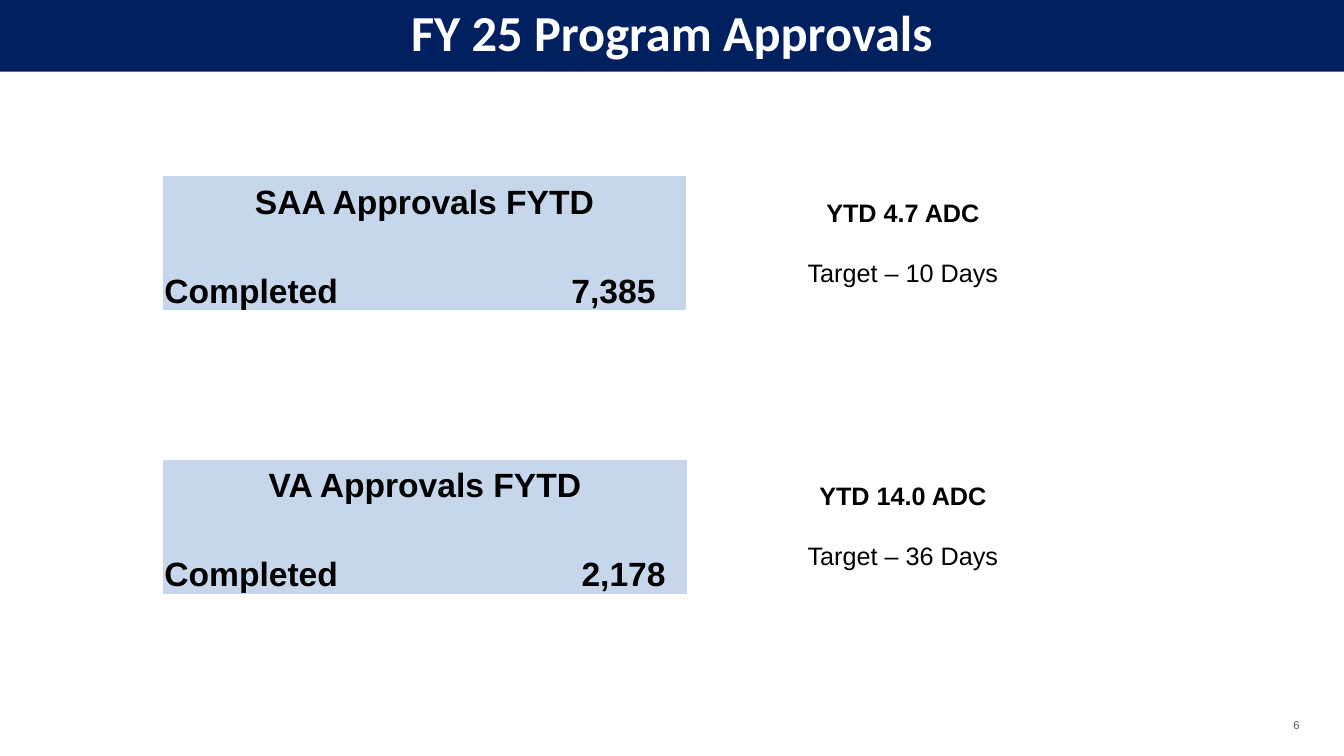
from dataclasses import dataclass

from pptx import Presentation
from pptx.dml.color import RGBColor
from pptx.enum.text import MSO_ANCHOR, PP_ALIGN
from pptx.oxml.ns import qn
from pptx.util import Inches, Pt

LEFT, CENTER, RIGHT = PP_ALIGN.LEFT, PP_ALIGN.CENTER, PP_ALIGN.RIGHT
MIDDLE, BOTTOM = MSO_ANCHOR.MIDDLE, MSO_ANCHOR.BOTTOM
HUES = {"navy": "002060", "pale": "C7D7EB", "ink": "000000", "white": "FFFFFF", "gray": "595959"}
NO_GRID = "{2D5ABB26-0587-4C30-8999-92F81FD0307C}"


@dataclass
class Group:
    top: float
    head: str
    count: str
    inset: float
    wide: float
    days: str
    target: str


GROUPS = [
    Group(1.75, "SAA Approvals FYTD", "7,385", 0.01, 1.43, "YTD 4.7 ADC", "Target – 10 Days"),
    Group(4.56, "VA Approvals FYTD", "2,178", 0.2, 1.44, "YTD 14.0 ADC", "Target – 36 Days"),
]


def hue(name: str) -> RGBColor:
    return RGBColor.from_string(HUES[name])


def write(para, text: str, size: float, align, bold: bool = True,
          tint: str = "ink", face: str = "Arial") -> None:
    para.alignment = align
    run = para.add_run()
    run.text = text
    font = run.font
    font.name, font.size, font.bold = face, Pt(size), bold
    font.color.rgb = hue(tint)


def place(shape, left: float, top: float, width: float, height: float) -> None:
    shape.left, shape.top = Inches(left), Inches(top)
    shape.width, shape.height = Inches(width), Inches(height)


def trim(frame) -> None:
    frame.margin_left = frame.margin_right = 0
    frame.margin_top = frame.margin_bottom = 0
    frame.vertical_anchor = MIDDLE


def add_box(slide, left: float, top: float, width: float, height: float):
    box = slide.shapes.add_textbox(Inches(left), Inches(top), Inches(width), Inches(height))
    box.text_frame.word_wrap = True
    return box.text_frame


def add_title(slide, text: str) -> None:
    title = slide.shapes.title
    place(title, 0, -0.09, 13.33, 0.8)
    title.fill.solid()
    title.fill.fore_color.rgb = hue("navy")
    trim(title.text_frame)
    write(title.text_frame.paragraphs[0], text, 36, CENTER, tint="white", face="Calibri")


def add_table(slide, group: Group) -> None:
    shape = slide.shapes.add_table(2, 2, Inches(1.62), Inches(group.top),
                                   Inches(3.75 + group.wide), Inches(1.33))
    next(shape.element.iter(qn("a:tableStyleId"))).text = NO_GRID
    table = shape.table
    table.first_row = table.horz_banding = False
    for col, width in zip(table.columns, (3.75, group.wide)):
        col.width = Inches(width)
    for row, height in zip(table.rows, (0.45, 0.88)):
        row.height = Inches(height)
    table.cell(0, 0).merge(table.cell(0, 1))
    cells = [(0, 0, group.head, CENTER, 0.01), (1, 0, "Completed", LEFT, 0.01),
             (1, 1, group.count, CENTER, group.inset)]
    for row, col, text, align, inset in cells:
        cell = table.cell(row, col)
        cell.fill.solid()
        cell.fill.fore_color.rgb = hue("pale")
        cell.vertical_anchor = BOTTOM
        cell.margin_left = Inches(inset)
        cell.margin_right = cell.margin_top = Inches(0.01)
        cell.margin_bottom = 0
        write(cell.text_frame.paragraphs[0], text, 24, align)


def add_days(slide, group: Group) -> None:
    frame = add_box(slide, 7.81, group.top + 0.16, 2.29, 1.01)
    write(frame.paragraphs[0], group.days, 18, CENTER)
    goal = frame.add_paragraph()
    goal.space_before = Pt(21)
    write(goal, group.target, 18, CENTER, bold=False)


def add_page(slide, text: str) -> None:
    frame = add_box(slide, 12.47, 7.08, 0.42, 0.23)
    trim(frame)
    write(frame.paragraphs[0], text, 8, RIGHT, bold=False, tint="gray")


def main() -> None:
    deck = Presentation()
    deck.slide_width, deck.slide_height = Inches(13.33), Inches(7.5)
    slide = deck.slides.add_slide(deck.slide_layouts[5])
    add_title(slide, "FY 25 Program Approvals")
    for group in GROUPS:
        add_table(slide, group)
        add_days(slide, group)
    add_page(slide, "6")
    deck.save("out.pptx")


if __name__ == "__main__":
    main()
